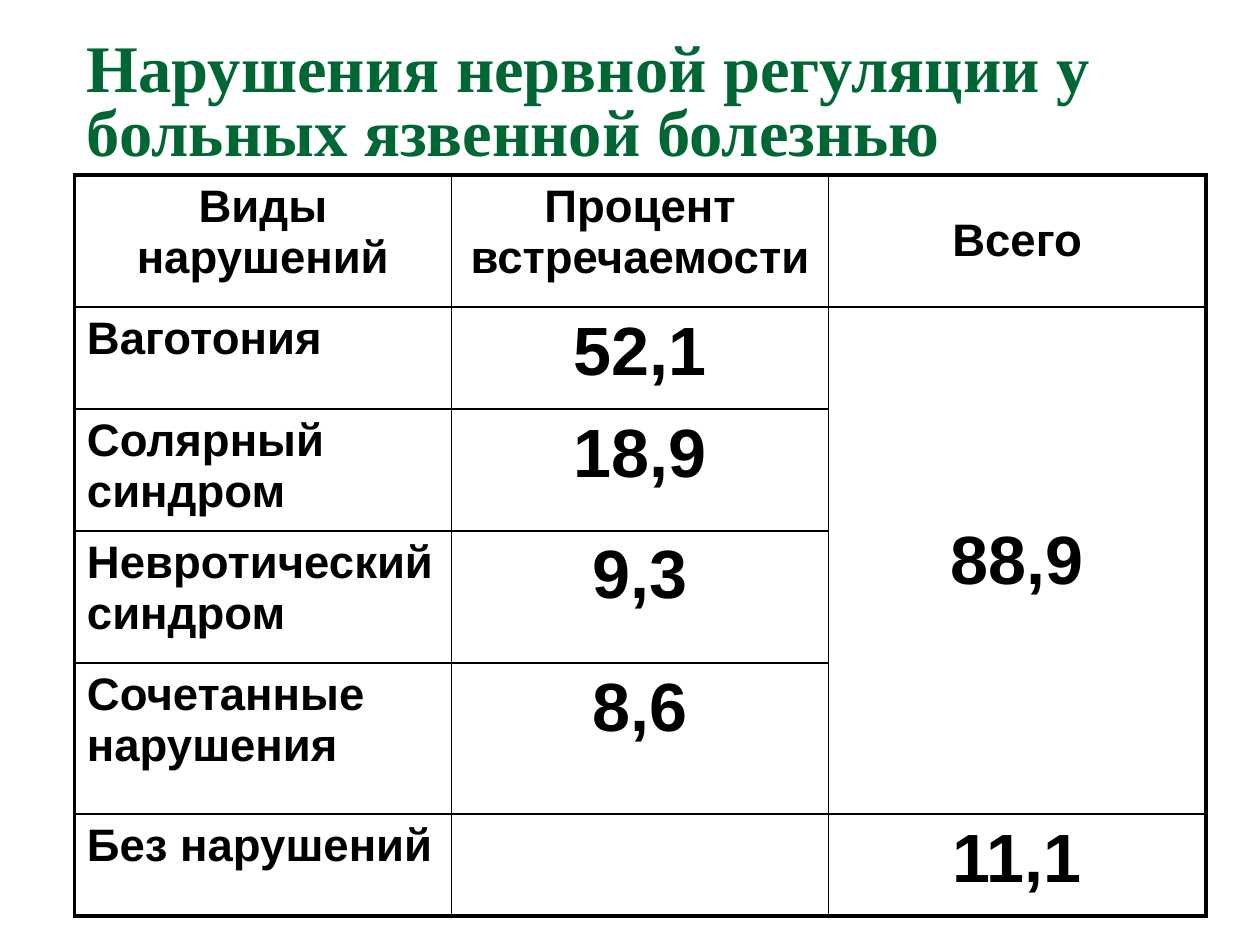
import pptx
import pptx.util
import pptx.dml.color
import pptx.enum.text
import pptx.oxml
import pptx.oxml.ns

BLACK = pptx.dml.color.RGBColor(0, 0, 0)
GREEN = pptx.dml.color.RGBColor(0, 0x66, 0x33)
WIDTH, HEIGHT = pptx.util.Inches(10), pptx.util.Inches(7.5)
ROW_SHARES = [1.05, 0.81, 0.88, 1.05, 1.2, 0.81]
ROWS = [
    ["Виды нарушений", "Процент встречаемости", "Всего"],
    ["Ваготония", "52,1", "88,9"],
    ["Солярный синдром", "18,9", ""],
    ["Невротический синдром", "9,3", ""],
    ["Сочетанные нарушения", "8,6", ""],
    ["Без нарушений", "", "11,1"],
]


def format_runs(p, font, size, color):
    """Set the bold type of every run in a paragraph."""
    for r in p.runs:
        r.font.name = font
        r.font.size = pptx.util.Pt(size)
        r.font.bold = True
        r.font.color.rgb = color


def add_title(s, x, y, w, h):
    """Place the heading in the given box."""
    tf = s.shapes.add_textbox(x, y, w, h).text_frame
    tf.word_wrap = True
    tf.vertical_anchor = pptx.enum.text.MSO_ANCHOR.MIDDLE
    tf.text = "Нарушения нервной регуляции у больных язвенной болезнью"
    p = tf.paragraphs[0]
    p.line_spacing = 0.8
    format_runs(p, "Times New Roman", 38, GREEN)


def set_borders(cell, widths):
    """Draw the left, right, top and bottom borders, widths in points."""
    tcPr = cell._tc.get_or_add_tcPr()
    for i, (side, width) in enumerate(zip("LRTB", widths)):
        line = pptx.oxml.parse_xml(
            f'<a:ln{side} {pptx.oxml.ns.nsdecls("a")} w="{int(pptx.util.Pt(width))}">'
            f'<a:solidFill><a:srgbClr val="{BLACK}"/></a:solidFill></a:ln{side}>')
        tcPr.insert(i, line)


def add_disorder_table(s, x, y, w, h):
    """Place the table of disorders in the given box."""
    n_rows, n_cols = len(ROWS), len(ROWS[0])
    table = s.shapes.add_table(n_rows, n_cols, x, y, w, h).table
    table.first_row = table.horz_banding = False
    for column in table.columns:
        column.width = w // n_cols
    for i, row in enumerate(ROWS):
        table.rows[i].height = int(h * ROW_SHARES[i] / sum(ROW_SHARES))
        for j, text in enumerate(row):
            cell = table.cell(i, j)
            cell.fill.background()
            edges = [j == 0, j == n_cols - 1, i == 0, i == n_rows - 1]
            set_borders(cell, [2.25 if edge else 1 for edge in edges])
            cell.text = text
            p = cell.text_frame.paragraphs[0]
            if i == 0 or j > 0:
                p.alignment = pptx.enum.text.PP_ALIGN.CENTER
            format_runs(p, "Arial", 26 if i == 0 or j == 0 else 39, BLACK)
    table.cell(1, 2).merge(table.cell(4, 2))
    for i in (0, 1):
        table.cell(i, 2).vertical_anchor = pptx.enum.text.MSO_ANCHOR.MIDDLE


def main():
    """Build and save the slide."""
    prs = pptx.Presentation()
    prs.slide_width, prs.slide_height = WIDTH, HEIGHT
    s = prs.slides.add_slide(prs.slide_layouts[6])
    left = int(WIDTH * 0.059)
    add_title(s, left, int(HEIGHT * 0.028), int(WIDTH * 0.85), int(HEIGHT / 6))
    add_disorder_table(s, left, int(HEIGHT * 0.185), int(WIDTH * 0.898), int(HEIGHT * 0.773))
    prs.save("out.pptx")


if __name__ == "__main__":
    main()
